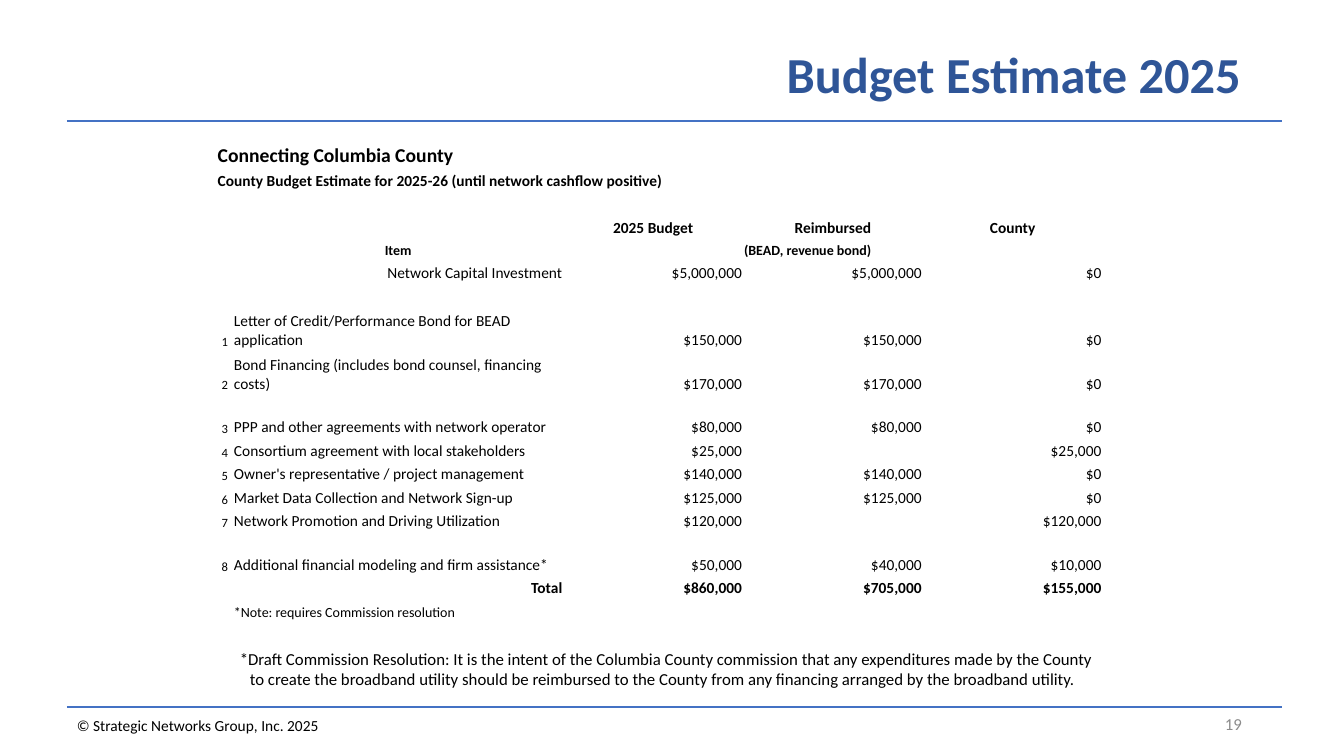
from lxml.etree import SubElement
from pptx import Presentation
from pptx.dml.color import RGBColor
from pptx.enum.shapes import MSO_CONNECTOR
from pptx.enum.text import MSO_ANCHOR, MSO_AUTO_SIZE, PP_ALIGN
from pptx.oxml.ns import qn
from pptx.util import Pt

BLACK, BLUE, NAVY, GRAY = "000000", "4472C4", "2F5597", "8C8C8C"
LEFT, CENTER, RIGHT = PP_ALIGN.LEFT, PP_ALIGN.CENTER, PP_ALIGN.RIGHT

COLUMN_WIDTHS = [11.6, 236, 128.4, 128.4, 128.4]
LINE, DOUBLE_LINE = 16.8, 31.2
ROW_HEIGHTS = ([21.6] + [LINE] * 3 + [15.2] + [LINE] * 2 + [DOUBLE_LINE] * 3
               + [LINE] * 4 + [DOUBLE_LINE] + [LINE] * 2)
FIRST_ITEM_ROW, TOTAL_ROW = 7, 15

BUDGET_ITEMS = [
    ("Letter of Credit/Performance Bond for BEAD application", "$150,000", "$150,000", "$0"),
    ("Bond Financing (includes bond counsel, financing costs)", "$170,000", "$170,000", "$0"),
    ("PPP and other agreements with network operator", "$80,000", "$80,000", "$0"),
    ("Consortium agreement with local stakeholders", "$25,000", "", "$25,000"),
    ("Owner's representative / project management", "$140,000", "$140,000", "$0"),
    ("Market Data Collection and Network Sign-up", "$125,000", "$125,000", "$0"),
    ("Network Promotion and Driving Utilization", "$120,000", "", "$120,000"),
    ("Additional financial modeling and firm assistance*", "$50,000", "$40,000", "$10,000"),
]
RESOLUTION = (
    "*Draft Commission Resolution: It is the intent of the Columbia County commission "
    "that any expenditures made by the County to create the broadband utility should be "
    "reimbursed to the County from any financing arranged by the broadband utility."
)


def color(value):
    return RGBColor.from_string(value)


def write(frame, text, size, shade=BLACK, bold=False, align=LEFT):
    para = frame.paragraphs[0]
    para.alignment = align
    span = para.add_run()
    span.text = text
    span.font.name = "Calibri"
    span.font.size = Pt(size)
    span.font.bold = bold
    span.font.color.rgb = color(shade)
    return para


def add_rule(page, top):
    rule = page.shapes.add_connector(
        MSO_CONNECTOR.STRAIGHT, Pt(47.8), Pt(top), Pt(916), Pt(top))
    rule.line.color.rgb = color(BLUE)
    rule.line.width = Pt(1.5)
    SubElement(rule._element.spPr, qn("a:effectLst"))


def add_title(page, text):
    title = page.shapes.title
    title.left, title.top, title.width, title.height = Pt(275.8), Pt(28.8), Pt(617.8), Pt(52.6)
    frame = title.text_frame
    frame.auto_size = MSO_AUTO_SIZE.NONE
    frame.vertical_anchor = MSO_ANCHOR.MIDDLE
    para = write(frame, text, 36, NAVY, True, RIGHT)
    para.line_spacing = 0.9


def add_text(page, text, left, top, width, height, size,
             shade=BLACK, align=LEFT, anchor=MSO_ANCHOR.TOP):
    box = page.shapes.add_textbox(Pt(left), Pt(top), Pt(width), Pt(height))
    frame = box.text_frame
    frame.word_wrap = True
    frame.vertical_anchor = anchor
    return write(frame, text, size, shade, align=align)


def add_empty_table(page):
    table = page.shapes.add_table(
        len(ROW_HEIGHTS), len(COLUMN_WIDTHS), Pt(154.8), Pt(97.9),
        Pt(sum(COLUMN_WIDTHS)), Pt(sum(ROW_HEIGHTS))).table
    table.first_row = table.horz_banding = False
    for column, width in zip(table.columns, COLUMN_WIDTHS):
        column.width = Pt(width)
    for row, height in zip(table.rows, ROW_HEIGHTS):
        row.height = Pt(height)
    for cell in table.iter_cells():
        cell.fill.background()
        cell.vertical_anchor = MSO_ANCHOR.BOTTOM
        cell.margin_left = cell.margin_right = cell.margin_top = Pt(0.72)
        cell.margin_bottom = Pt(0)
    return table


def fill_cell(table, row, column, text, size=11, bold=False, align=LEFT):
    if text:
        write(table.cell(row, column).text_frame, text, size, bold=bold, align=align)


def fill_amounts(table, row, amounts, bold=False):
    for column, amount in enumerate(amounts, start=2):
        fill_cell(table, row, column, amount, bold=bold, align=RIGHT)


def shrink_empty_cells(table):
    for cell in table.iter_cells():
        para = cell.text_frame.paragraphs[0]
        if not para.runs:
            SubElement(para._p, qn("a:endParaRPr"), sz="900")


def add_budget(page):
    table = add_empty_table(page)
    table.cell(0, 0).merge(table.cell(0, 1))
    table.cell(1, 0).merge(table.cell(1, 2))
    fill_cell(table, 0, 0, "Connecting Columbia County", 14, True)
    fill_cell(table, 1, 0,
              "County Budget Estimate for 2025-26 (until network cashflow positive)", bold=True)
    for column, heading in enumerate(["2025 Budget", "Reimbursed", "County"], start=2):
        fill_cell(table, 3, column, heading, bold=True, align=CENTER)
    fill_cell(table, 4, 1, "Item", 10, True, CENTER)
    fill_cell(table, 4, 3, "(BEAD, revenue bond)", 10, True)
    fill_cell(table, 5, 1, "Network Capital Investment", align=RIGHT)
    fill_amounts(table, 5, ["$5,000,000", "$5,000,000", "$0"])
    for number, (item, *amounts) in enumerate(BUDGET_ITEMS, start=1):
        row = FIRST_ITEM_ROW + number - 1
        fill_cell(table, row, 0, str(number), 9, align=CENTER)
        fill_cell(table, row, 1, item)
        fill_amounts(table, row, amounts)
    fill_cell(table, TOTAL_ROW, 1, "Total", bold=True, align=RIGHT)
    fill_amounts(table, TOTAL_ROW, ["$860,000", "$705,000", "$155,000"], True)
    fill_cell(table, TOTAL_ROW + 1, 1, "*Note: requires Commission resolution", 10)
    shrink_empty_cells(table)


def main():
    deck = Presentation()
    deck.slide_width, deck.slide_height = Pt(960), Pt(540)
    page = deck.slides.add_slide(deck.slide_layouts[5])
    for top in (86.4, 504.7):
        add_rule(page, top)
    add_title(page, "Budget Estimate 2025")
    add_budget(page)
    resolution = add_text(page, RESOLUTION, 164.2, 460.1, 631.4, 36, 12)
    properties = resolution._p.get_or_add_pPr()
    properties.set("marL", str(Pt(7.2)))
    properties.set("indent", str(Pt(-7.2)))
    add_text(page, "© Strategic Networks Group, Inc. 2025", 47.8, 508.3, 244.8, 20.9, 11)
    add_text(page, "19", 678.2, 505.4, 216, 23.8, 12, GRAY, RIGHT, MSO_ANCHOR.MIDDLE)
    deck.save("out.pptx")


if __name__ == "__main__":
    main()
